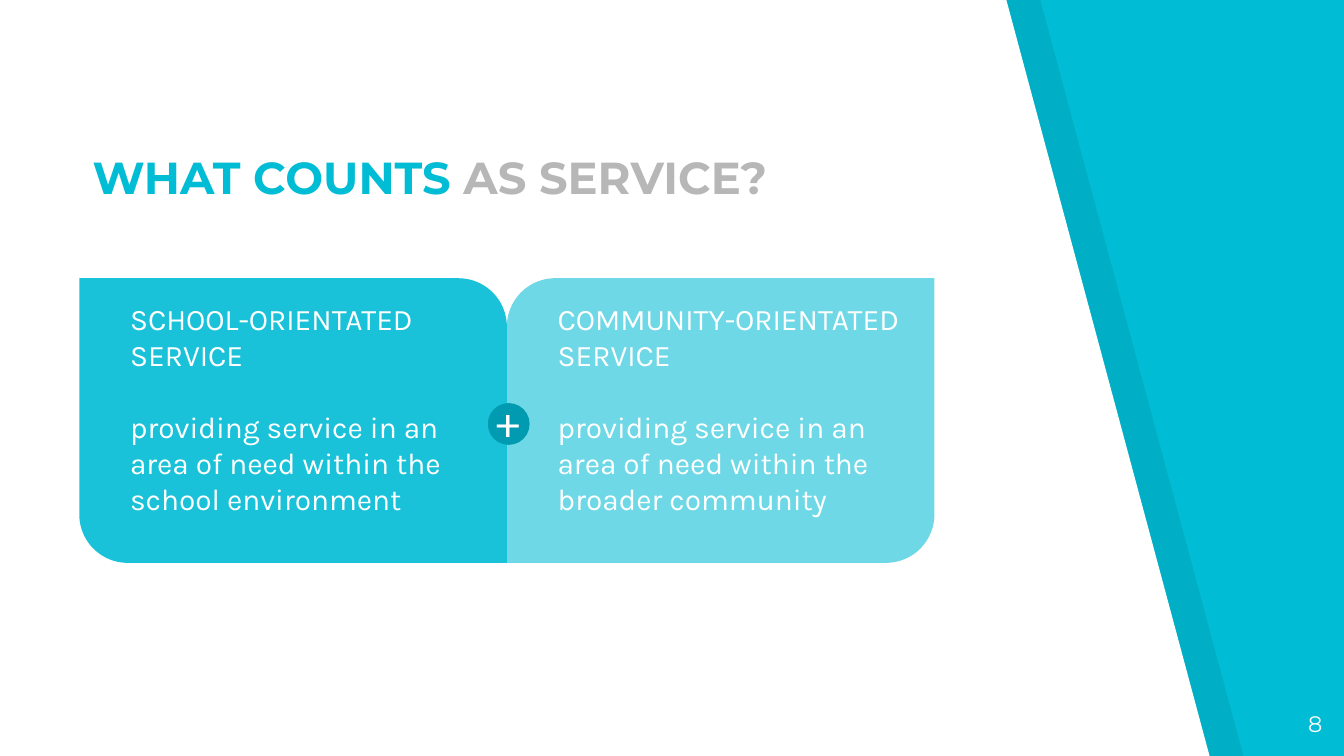
from dataclasses import dataclass
from typing import Optional

from lxml import etree
from pptx import Presentation
from pptx import util as u
from pptx.dml.color import RGBColor
from pptx.enum import shapes, text
from pptx.oxml.ns import qn


@dataclass(frozen=True)
class Theme:
    accent: str = "00BCD4"
    badge: str = "009BB0"
    grey: str = "B7B7B7"
    white: str = "FFFFFF"
    black: str = "000000"
    heading_font: str = "Montserrat"
    body_font: str = "Karla"
    large: float = 24
    body: float = 16
    small: float = 12
    body_line: float = 19.3


@dataclass(frozen=True)
class Box:
    left: float
    top: float
    width: float
    height: float

    def emu(self) -> tuple:
        return tuple(u.Cm(v) for v in (self.left, self.top, self.width, self.height))


@dataclass(frozen=True)
class Card:
    heading: str
    detail: str
    opacity: int
    corners: tuple
    text_width: float


T = Theme()
SLIDE_W, SLIDE_H = 25.4, 14.29
CARD = Box(1.5, 5.26, 8.08, 5.38)
TEXT_INDENT, TEXT_TOP, TEXT_H = 0.71, 5.56, 4.37
ROUND = 0.17
CARDS = [
    Card("SCHOOL-ORIENTATED SERVICE",
         "providing service in an area of need within the school environment",
         90, (0, ROUND), 6.86),
    Card("COMMUNITY-ORIENTATED SERVICE",
         "providing service in an area of need within the broader community",
         57, (ROUND, 0), 7.39),
]


def paint(sp, color: str, opacity: int = 100) -> None:
    sp.shadow.inherit = False
    sp.line.fill.background()
    sp.fill.solid()
    sp.fill.fore_color.rgb = RGBColor.from_string(color)
    if opacity < 100:
        clr = sp.fill._xPr.find(qn("a:solidFill"))[0]
        etree.SubElement(clr, qn("a:alpha"), val=str(opacity * 1000))


def add_panel(s, offset: float, color: str, opacity: int = 100) -> None:
    corners = [(0, SLIDE_H), (22.86, SLIDE_H), (19.02, 0)]
    fb = s.shapes.build_freeform(u.Cm(offset), 0)
    fb.add_line_segments([(u.Cm(offset + x), u.Cm(y)) for x, y in corners])
    paint(fb.convert_to_shape(), color, opacity)


def add_preset(s, kind, box: Box, color: str, opacity: int = 100):
    sp = s.shapes.add_shape(kind, *box.emu())
    paint(sp, color, opacity)
    return sp


def add_text(s, box: Box, paragraphs: list, *, size: float, font: str,
             bold: bool = False, align=text.PP_ALIGN.LEFT,
             anchor=text.MSO_ANCHOR.TOP, inset: float = 0.13,
             gap: Optional[float] = None) -> None:
    tf = s.shapes.add_textbox(*box.emu()).text_frame
    tf.word_wrap = True
    tf.vertical_anchor = anchor
    tf.margin_left = tf.margin_right = u.Cm(0.25)
    tf.margin_top = tf.margin_bottom = u.Cm(inset)
    for i, runs in enumerate(paragraphs):
        p = tf.add_paragraph() if i else tf.paragraphs[0]
        p.alignment = align
        if i and gap:
            p.space_before = u.Pt(gap)
        for words, color in runs:
            r = p.add_run()
            r.text = words
            r.font.name = font
            r.font.size = u.Pt(size)
            r.font.bold = bold
            r.font.color.rgb = RGBColor.from_string(color)


def add_card(s, index: int, card: Card) -> None:
    left = CARD.left + index * CARD.width
    sp = add_preset(s, shapes.MSO_SHAPE.ROUND_2_DIAG_RECTANGLE,
                    Box(left, CARD.top, CARD.width, CARD.height),
                    T.accent, card.opacity)
    for i, radius in enumerate(card.corners):
        sp.adjustments[i] = radius
    add_text(s, Box(left + TEXT_INDENT, TEXT_TOP, card.text_width, TEXT_H),
             [[(card.heading, T.white)], [(card.detail, T.white)]],
             size=T.body, font=T.body_font, gap=T.body_line)


def main() -> None:
    prs = Presentation()
    prs.slide_width, prs.slide_height = u.Cm(SLIDE_W), u.Cm(SLIDE_H)
    s = prs.slides.add_slide(prs.slide_layouts[6])
    s.background.fill.solid()
    s.background.fill.fore_color.rgb = RGBColor.from_string(T.accent)

    add_panel(s, 0.64, T.black, 7)
    add_panel(s, 0, T.white)
    add_text(s, Box(23.72, 13.18, 1.52, 1.09), [[("8", T.white)]],
             size=T.small, font=T.heading_font,
             align=text.PP_ALIGN.RIGHT, inset=0.25)
    add_text(s, Box(1.5, 2.74, 17.12, 1.35),
             [[("WHAT COUNTS ", T.accent), ("AS SERVICE?", T.grey)]],
             size=T.large, font=T.heading_font, bold=True,
             anchor=text.MSO_ANCHOR.BOTTOM, inset=0.25)
    for i, card in enumerate(CARDS):
        add_card(s, i, card)
    add_preset(s, shapes.MSO_SHAPE.OVAL, Box(9.22, 7.62, 0.79, 0.79), T.badge)
    add_text(s, Box(9.14, 7.29, 1.04, 1.27), [[("+", T.white)]],
             size=T.large, font=T.body_font)
    prs.save("out.pptx")


if __name__ == "__main__":
    main()
